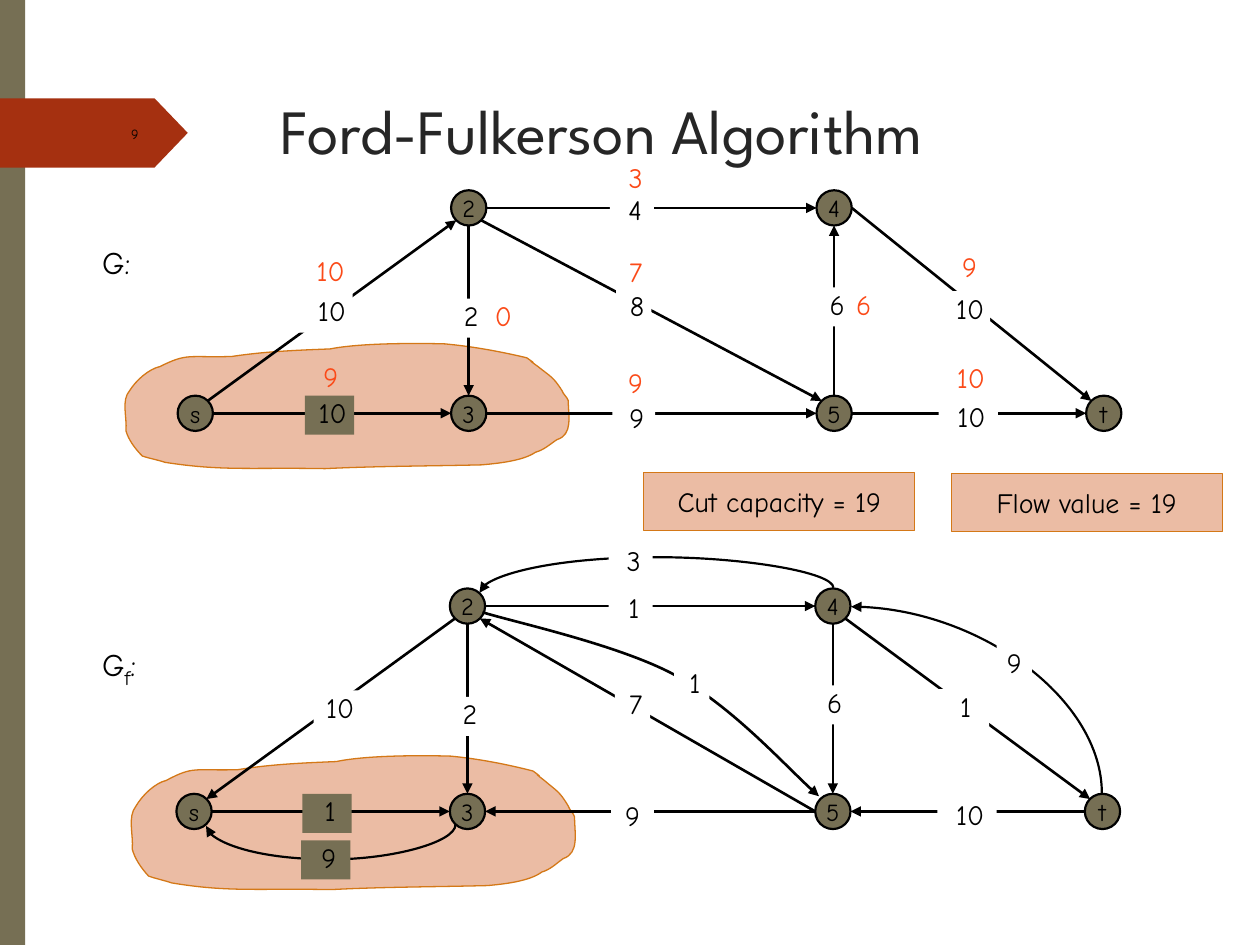
import pptx
import pptx.dml.color
import pptx.enum.shapes
import pptx.enum.text
import pptx.oxml.ns
import pptx.util

Inches = pptx.util.Inches
Pt = pptx.util.Pt
qn = pptx.oxml.ns.qn
SHAPE = pptx.enum.shapes.MSO_SHAPE
CONNECTOR = pptx.enum.shapes.MSO_CONNECTOR
ALIGN = pptx.enum.text.PP_ALIGN
ANCHOR = pptx.enum.text.MSO_ANCHOR

BODY_FONT = "Comic Neue"
BLACK, WHITE, OLIVE, RUST = "000000", "FFFFFF", "766F54", "A53010"
PEACH, ORANGE, FLOW_RED = "EBBCA4", "D47817", "FB4A18"

RADIUS = 0.14
NODES = {"s": (1.55, 3.28), "2": (3.72, 1.65), "3": (3.72, 3.28),
         "4": (6.62, 1.65), "5": (6.62, 3.28), "t": (8.76, 3.28)}
SITES = {"n": (0, -1), "s": (0, 1), "e": (1, 0), "w": (-1, 0),
         "ne": (0.7, -0.7), "nw": (-0.7, -0.7),
         "se": (0.7, 0.7), "sw": (-0.7, 0.7)}
RESIDUAL_OFFSET = (-0.01, 3.16)

# Each edge: from node, its site, to node, its site
GRAPH_EDGES = [
    ("s", "ne", "2", "sw"), ("s", "e", "3", "w"), ("3", "e", "5", "w"),
    ("2", "e", "4", "w"), ("2", "s", "3", "n"), ("5", "n", "4", "s"),
    ("2", "se", "5", "nw"), ("4", "e", "t", "nw"), ("5", "e", "t", "w")]
RESIDUAL_EDGES = [
    ("s", "e", "3", "w"), ("5", "w", "3", "e"), ("2", "e", "4", "w"),
    ("2", "s", "3", "n"), ("4", "s", "5", "n"), ("4", "se", "t", "nw"),
    ("t", "w", "5", "e"), ("5", "w", "2", "se"), ("2", "sw", "s", "ne")]

# Each label: text, left, top, width, indent, fill
GRAPH_LABELS = [
    ("10", 2.42, 3.14, 0.39, 0.05, OLIVE), ("10", 2.33, 2.33, 0.47, 0.14, WHITE),
    ("9", 4.86, 3.18, 0.34, 0.05, WHITE), ("8", 4.89, 2.29, 0.28, 0.05, WHITE),
    ("4", 4.84, 1.53, 0.35, 0.05, WHITE), ("10", 7.45, 3.17, 0.47, 0.05, WHITE),
    ("10", 7.4, 2.31, 0.46, 0.14, WHITE), ("6", 6.39, 2.28, 0.46, 0.05, WHITE),
    ("2", 3.48, 2.37, 0.47, 0.05, WHITE)]
RESIDUAL_LABELS = [
    ("1", 2.4, 6.3, 0.39, 0.05, OLIVE), ("9", 4.85, 6.34, 0.34, 0, WHITE),
    ("1", 4.83, 4.69, 0.35, 0.05, WHITE), ("1", 7.39, 5.47, 0.46, 0.09, WHITE),
    ("6", 6.37, 5.44, 0.46, 0.05, WHITE), ("2", 3.47, 5.53, 0.47, 0.05, WHITE),
    ("10", 7.44, 6.33, 0.47, 0.05, WHITE), ("7", 4.88, 5.45, 0.28, 0.05, WHITE),
    ("10", 2.49, 5.48, 0.37, 0.05, WHITE), ("9", 2.39, 6.67, 0.39, 0.05, OLIVE),
    ("9", 7.91, 5.12, 0.28, 0, WHITE), ("3", 4.83, 4.31, 0.35, 0.05, WHITE),
    ("1", 5.35, 5.28, 0.28, 0.05, WHITE)]
FLOWS = [("10", 2.44, 2.01), ("3", 4.86, 1.27), ("9", 7.51, 1.98),
         ("9", 2.44, 2.85), ("9", 4.86, 2.9), ("10", 7.52, 2.86),
         ("7", 4.86, 2.02), ("0", 3.81, 2.37), ("6", 6.67, 2.28)]

# Start point, then two control points and an end point for each curve
CUT_OUTLINE = [
    (3.53, 2.73), (3.75, 2.75), (3.97, 2.79), (4.18, 2.84),
    (4.31, 2.93), (4.13, 2.81), (4.27, 2.91), (4.37, 2.99), (4.39, 2.99), (4.46, 3.1),
    (4.47, 3.13), (4.5, 3.15), (4.51, 3.18), (4.51, 3.3), (4.55, 3.45), (4.42, 3.49),
    (4.36, 3.53), (4.32, 3.57), (4.25, 3.59), (4.15, 3.66), (3.94, 3.68), (3.82, 3.69),
    (3.4, 3.7), (2.99, 3.7), (2.58, 3.72), (1.97, 3.71), (1.76, 3.74), (1.31, 3.67),
    (1.25, 3.65), (1.19, 3.64), (1.13, 3.62), (1.07, 3.56), (1.02, 3.49), (1, 3.42),
    (1.01, 3.31), (0.96, 3.18), (1.03, 3.1), (1.08, 3.02), (1.18, 2.93), (1.27, 2.91),
    (1.49, 2.8), (1.49, 2.84), (1.84, 2.83), (2.1, 2.79), (2.36, 2.78), (2.62, 2.77),
    (2.92, 2.71), (3.53, 2.73), (3.53, 2.73)]
CURVE_2_TO_5 = [(3.83, 4.86), (4.09, 4.94), (4.92, 5.12), (5.36, 5.36),
                (5.81, 5.61), (6.27, 6.12), (6.5, 6.32)]


def rgb(color):
    return pptx.dml.color.RGBColor.from_string(color)


def style(sp, fill=None, line=None, width=0.75):
    sp.shadow.inherit = False
    if fill:
        sp.fill.solid()
        sp.fill.fore_color.rgb = rgb(fill)
    else:
        sp.fill.background()
    if line:
        sp.line.color.rgb = rgb(line)
        sp.line.width = Pt(width)
    else:
        sp.line.fill.background()


def add_run(p, text, size, color=BLACK, font=BODY_FONT):
    r = p.add_run()
    r.text = text
    r.font.size = Pt(size)
    r.font.name = font
    r.font.color.rgb = rgb(color)
    return r


def set_frame(sp, align, anchor=ANCHOR.TOP, indent=0, wrap=True):
    tf = sp.text_frame
    tf.word_wrap = wrap
    tf.vertical_anchor = anchor
    tf.margin_left = Inches(indent)
    tf.margin_right = tf.margin_top = tf.margin_bottom = 0
    p = tf.paragraphs[0]
    p.alignment = align
    return p


def add_box(s, kind, left, top, width, height, fill, line=None, line_width=0.75):
    sp = s.shapes.add_shape(kind, Inches(left), Inches(top), Inches(width), Inches(height))
    style(sp, fill, line, line_width)
    return sp


def add_text(s, text, left, top, width, height, size, color, align, anchor=ANCHOR.TOP):
    sp = s.shapes.add_textbox(Inches(left), Inches(top), Inches(width), Inches(height))
    add_run(set_frame(sp, align, anchor), text, size, color)


def add_arrowhead(sp):
    ln = sp._element.spPr.get_or_add_ln()
    ln.append(ln.makeelement(qn("a:tailEnd"), {"type": "triangle"}))


def add_arrow(s, x1, y1, x2, y2, kind=CONNECTOR.STRAIGHT, width=1.5):
    cxn = s.shapes.add_connector(kind, Inches(x1), Inches(y1), Inches(x2), Inches(y2))
    cxn.line.color.rgb = rgb(BLACK)
    cxn.line.width = Pt(width)
    add_arrowhead(cxn)
    sp_pr = cxn._element.spPr
    sp_pr.append(sp_pr.makeelement(qn("a:effectLst"), {}))
    return cxn


def add_curved_arrow(s, x1, y1, x2, y2, degrees, preset, bend=None):
    """Corners are those before rotation; bend is a share of the box width."""
    cxn = add_arrow(s, x1, y1, x2, y2, CONNECTOR.CURVE, 1.25)
    sp_pr = cxn._element.spPr
    sp_pr.find(qn("a:xfrm")).set("rot", str(degrees * 60000))
    geom = sp_pr.find(qn("a:prstGeom"))
    geom.set("prst", preset)
    if bend is not None:
        guides = geom.find(qn("a:avLst"))
        guides.append(guides.makeelement(
            qn("a:gd"), {"name": "adj1", "fmla": f"val {round(bend * 100000)}"}))


def add_curve(s, points, closed):
    """Draw Bezier curves by grouping each three line points into one curve."""
    emu = [(Inches(x), Inches(y)) for x, y in points]
    builder = s.shapes.build_freeform(*emu[0])
    builder.add_line_segments(emu[1:], close=closed)
    sp = builder.convert_to_shape()
    lines = list(sp._element.iter(qn("a:lnTo")))
    for i in range(0, len(lines), 3):
        curve = lines[i].makeelement(qn("a:cubicBezTo"), {})
        lines[i].addprevious(curve)
        for line in lines[i:i + 3]:
            curve.append(line[0])
            line.getparent().remove(line)
    return sp


def add_graph(s, edges, dx=0, dy=0):
    for name, (x, y) in NODES.items():
        sp = add_box(s, SHAPE.OVAL, x + dx - RADIUS, y + dy - RADIUS,
                     2 * RADIUS, 2 * RADIUS, OLIVE, BLACK, 1.25)
        add_run(set_frame(sp, ALIGN.CENTER, ANCHOR.MIDDLE, wrap=False), name, 14)
    for start, start_site, end, end_site in edges:
        ends = []
        for node, site in ((start, start_site), (end, end_site)):
            ends += [c + d + RADIUS * u for c, d, u in zip(NODES[node], (dx, dy), SITES[site])]
        add_arrow(s, *ends)


def add_labels(s, labels):
    for text, left, top, width, indent, fill in labels:
        sp = add_box(s, SHAPE.RECTANGLE, left, top, width, 0.31, fill)
        add_run(set_frame(sp, ALIGN.CENTER, indent=indent), text, 16)


def add_residual_curves(s):
    add_curved_arrow(s, 2.62, 5.56, 2.63, 7.54, 90, "curvedConnector3", 28)
    add_curved_arrow(s, 8.49, 4.56, 7.01, 6.55, 90, "curvedConnector2")
    add_curved_arrow(s, 5.23, 6.09, 5.19, 3.28, 270, "curvedConnector3", -6.04)
    sp = add_curve(s, CURVE_2_TO_5, False)
    style(sp, None, BLACK, 1.5)
    add_arrowhead(sp)


def add_graph_name(s, top, name, subscript=""):
    sp = add_box(s, SHAPE.RECTANGLE, 0.74, top, 0.48, 0.35, WHITE)
    p = set_frame(sp, ALIGN.LEFT, indent=0.07)
    add_run(p, name, 18)
    if subscript:
        r = add_run(p, subscript, 20)
        r.font._element.set("baseline", "-25000")
    add_run(p, ":", 18)


def add_title(s, text):
    title = s.shapes.title
    title.left, title.top, title.width, title.height = map(Inches, (2.13, 0.68, 7.21, 1.4))
    tf = title.text_frame
    tf.vertical_anchor = ANCHOR.TOP
    p = tf.paragraphs[0]
    p.alignment = ALIGN.LEFT
    add_run(p, text, 36, "262626", "League Spartan")


def main():
    prs = pptx.Presentation()
    prs.slide_width, prs.slide_height = Inches(10), Inches(7.5)
    s = prs.slides.add_slide(prs.slide_layouts[5])
    add_box(s, SHAPE.RECTANGLE, 0, 0, 0.2, 7.5, OLIVE)
    tag = add_box(s, SHAPE.PENTAGON, 0, 0.78, 1.49, 0.55, RUST)
    tag.adjustments[0] = 0.48
    add_title(s, "Ford-Fulkerson Algorithm")
    add_text(s, "9", 0.56, 0.86, 0.54, 0.4, 8, BLACK, ALIGN.RIGHT, ANCHOR.MIDDLE)

    residual_cut = [(x + 0.05, 5.98 + (y - 2.71) * 1.07) for x, y in CUT_OUTLINE]
    for outline in (CUT_OUTLINE, residual_cut):
        style(add_curve(s, outline, True), PEACH, ORANGE)
    add_graph(s, GRAPH_EDGES)
    add_labels(s, GRAPH_LABELS)
    for text, left, top in FLOWS:
        add_text(s, text, left, top, 0.37, 0.19, 16, FLOW_RED, ALIGN.CENTER)
    add_graph_name(s, 1.93, "G")
    add_graph(s, RESIDUAL_EDGES, *RESIDUAL_OFFSET)
    add_residual_curves(s)
    add_labels(s, RESIDUAL_LABELS)
    add_graph_name(s, 5.09, "G", "f")
    for text, left, top in (("Flow value = 19", 7.55, 3.76), ("Cut capacity = 19", 5.11, 3.75)):
        sp = add_box(s, SHAPE.RECTANGLE, left, top, 2.15, 0.46, PEACH, ORANGE)
        add_run(set_frame(sp, ALIGN.CENTER, ANCHOR.MIDDLE), text, 16)
    prs.save("out.pptx")


if __name__ == "__main__":
    main()
